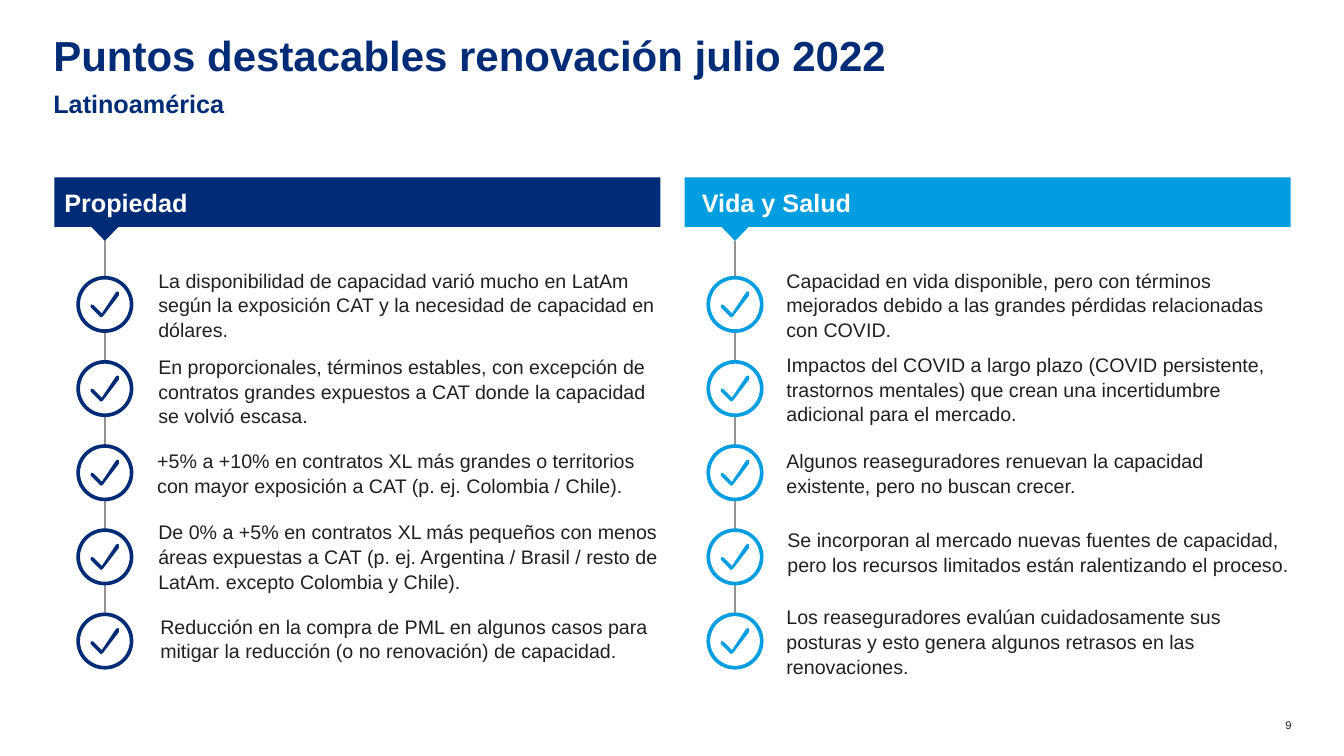
"""Builds the slide on the July 2022 renewal highlights in Latin America."""
from lxml.etree import SubElement
from pptx import Presentation
from pptx.dml.color import RGBColor
from pptx.enum.shapes import MSO_CONNECTOR, MSO_SHAPE
from pptx.enum.text import MSO_ANCHOR, PP_ALIGN
from pptx.oxml.ns import qn
from pptx.util import Inches, Pt

NAVY = RGBColor(0x00, 0x2C, 0x77)
SKY = RGBColor(0x00, 0x9D, 0xE0)
GREY = RGBColor(0x94, 0x94, 0x94)
INK = RGBColor(0x20, 0x20, 0x20)
WHITE = RGBColor(0xFF, 0xFF, 0xFF)

TITLE = "Puntos destacables renovación julio 2022"
REGION = "Latinoamérica"
PAGE_NUMBER = "9"

# Each point: wording, shift right and shift down from its grid cell
TOPICS = [
    {"heading": "Propiedad", "color": NAVY, "inset": 0.1, "text_offset": 1.03, "points": [
        ("La disponibilidad de capacidad varió mucho en LatAm según la exposición CAT "
         "y la necesidad de capacidad en dólares.", 0, 0),
        ("En proporcionales, términos estables, con excepción de contratos grandes "
         "expuestos a CAT donde la capacidad se volvió escasa.", 0, 0.02),
        ("+5% a +10% en contratos XL más grandes o territorios con mayor exposición "
         "a CAT (p. ej. Colombia / Chile).", -0.01, 0),
        ("De 0% a +5% en contratos XL más pequeños con menos áreas expuestas a CAT "
         "(p. ej. Argentina / Brasil / resto de LatAm. excepto Colombia y Chile).", 0, -0.01),
        ("Reducción en la compra de PML en algunos casos para mitigar la reducción "
         "(o no renovación) de capacidad.", 0.02, -0.03),
    ]},
    {"heading": "Vida y Salud", "color": SKY, "inset": 0.17, "text_offset": 1.01, "points": [
        ("Capacidad en vida disponible, pero con términos mejorados debido a las "
         "grandes pérdidas relacionadas con COVID.", 0, 0),
        ("Impactos del COVID a largo plazo (COVID persistente, trastornos mentales) "
         "que crean una incertidumbre adicional para el mercado.", 0, 0),
        ("Algunos reaseguradores renuevan la capacidad existente, pero no buscan "
         "crecer.", 0, 0),
        ("Se incorporan al mercado nuevas fuentes de capacidad, pero los recursos "
         "limitados están ralentizando el proceso.", 0.01, -0.05),
        ("Los reaseguradores evalúan cuidadosamente sus posturas y esto genera algunos "
         "retrasos en las renovaciones.", 0, 0),
    ]},
]

LEFT, COLUMN_WIDTH, COLUMN_PITCH = 0.54, 6.01, 6.25
HEADER_TOP, HEADER_HEIGHT = 1.76, 0.49
POINTER_WIDTH, POINTER_HEIGHT = 0.27, 0.14
AXIS_OFFSET = 0.5
FIRST_ROW, ROW_PITCH = 3.02, 0.835
RING, RING_LINE = 0.53, 2.6
POINT_WIDTH, POINT_HEIGHT = 5, 0.71
TICK = [(11, -12), (-3, 9), (-11, 1), (-13, 0), (-14, 1), (-14, 3), (-4, 13),
        (-2, 12), (14, -9), (14, -12), (13, -13)]


def write(frame, wording, size, color, bold=False, align=PP_ALIGN.LEFT,
          anchor=MSO_ANCHOR.TOP, inset=0, spacing=1.0):
    frame.word_wrap = True
    frame.vertical_anchor = anchor
    frame.margin_left = Inches(inset)
    frame.margin_right = frame.margin_top = frame.margin_bottom = 0
    paragraph = frame.paragraphs[0]
    paragraph.text = wording
    paragraph.alignment = align
    paragraph.line_spacing = spacing
    font = paragraph.font
    font.name, font.size, font.bold = "Arial", Pt(size), bold
    font.color.rgb = color


def add_text(slide, left, top, width, height, *args, **style):
    box = slide.shapes.add_textbox(*map(Inches, (left, top, width, height)))
    write(box.text_frame, *args, **style)


def paint(shape, color):
    shape.shadow.inherit = False
    shape.fill.solid()
    shape.fill.fore_color.rgb = color
    shape.line.fill.background()
    return shape


def add_filled(slide, kind, left, top, width, height, color):
    return paint(slide.shapes.add_shape(kind, *map(Inches, (left, top, width, height))), color)


def add_check(slide, x, y, color):
    ring = add_filled(slide, MSO_SHAPE.OVAL, x - RING / 2, y - RING / 2, RING, RING, WHITE)
    ring.line.color.rgb = color
    ring.line.width = Pt(RING_LINE)
    outline = slide.shapes.build_freeform(*TICK[0], scale=Inches(0.01))
    outline.add_line_segments(TICK[1:], close=True)
    paint(outline.convert_to_shape(Inches(x), Inches(y)), color)


def add_topic(slide, left, topic):
    color, axis = topic["color"], left + AXIS_OFFSET
    header_bottom = HEADER_TOP + HEADER_HEIGHT
    header = add_filled(slide, MSO_SHAPE.RECTANGLE, left, HEADER_TOP,
                        COLUMN_WIDTH, HEADER_HEIGHT, color)
    write(header.text_frame, topic["heading"], 18, WHITE, bold=True,
          anchor=MSO_ANCHOR.MIDDLE, inset=topic["inset"])
    pointer = add_filled(slide, MSO_SHAPE.ISOSCELES_TRIANGLE, axis - POINTER_WIDTH / 2,
                         header_bottom, POINTER_WIDTH, POINTER_HEIGHT, color)
    pointer.rotation = 180
    last_row = FIRST_ROW + ROW_PITCH * (len(topic["points"]) - 1)
    thread = slide.shapes.add_connector(
        MSO_CONNECTOR.STRAIGHT, Inches(axis), Inches(header_bottom + POINTER_HEIGHT),
        Inches(axis), Inches(last_row - RING / 4))
    thread.line.color.rgb = GREY
    thread.line.width = Pt(1.5)
    SubElement(thread._element.spPr, qn("a:effectLst"))
    for row, (wording, right, down) in enumerate(topic["points"]):
        y = FIRST_ROW + row * ROW_PITCH
        add_check(slide, axis, y, color)
        add_text(slide, left + topic["text_offset"] + right, y + down - POINT_HEIGHT / 2,
                 POINT_WIDTH, POINT_HEIGHT, wording, 14, INK,
                 anchor=MSO_ANCHOR.MIDDLE, spacing=1.05)


def main():
    deck = Presentation()
    deck.slide_width, deck.slide_height = Inches(13.33), Inches(7.5)
    slide = deck.slides.add_slide(deck.slide_layouts[6])
    add_text(slide, 0.53, 0.39, 12.27, 0.54, TITLE, 30, NAVY, bold=True, spacing=0.8)
    add_text(slide, 0.53, 0.88, 12.27, 0.35, REGION, 18, NAVY, bold=True)
    for column, topic in enumerate(TOPICS):
        add_topic(slide, LEFT + column * COLUMN_PITCH, topic)
    add_text(slide, 12.5, 7.13, 0.31, 0.13, PAGE_NUMBER, 8, INK, align=PP_ALIGN.RIGHT)
    deck.save("out.pptx")


if __name__ == "__main__":
    main()
